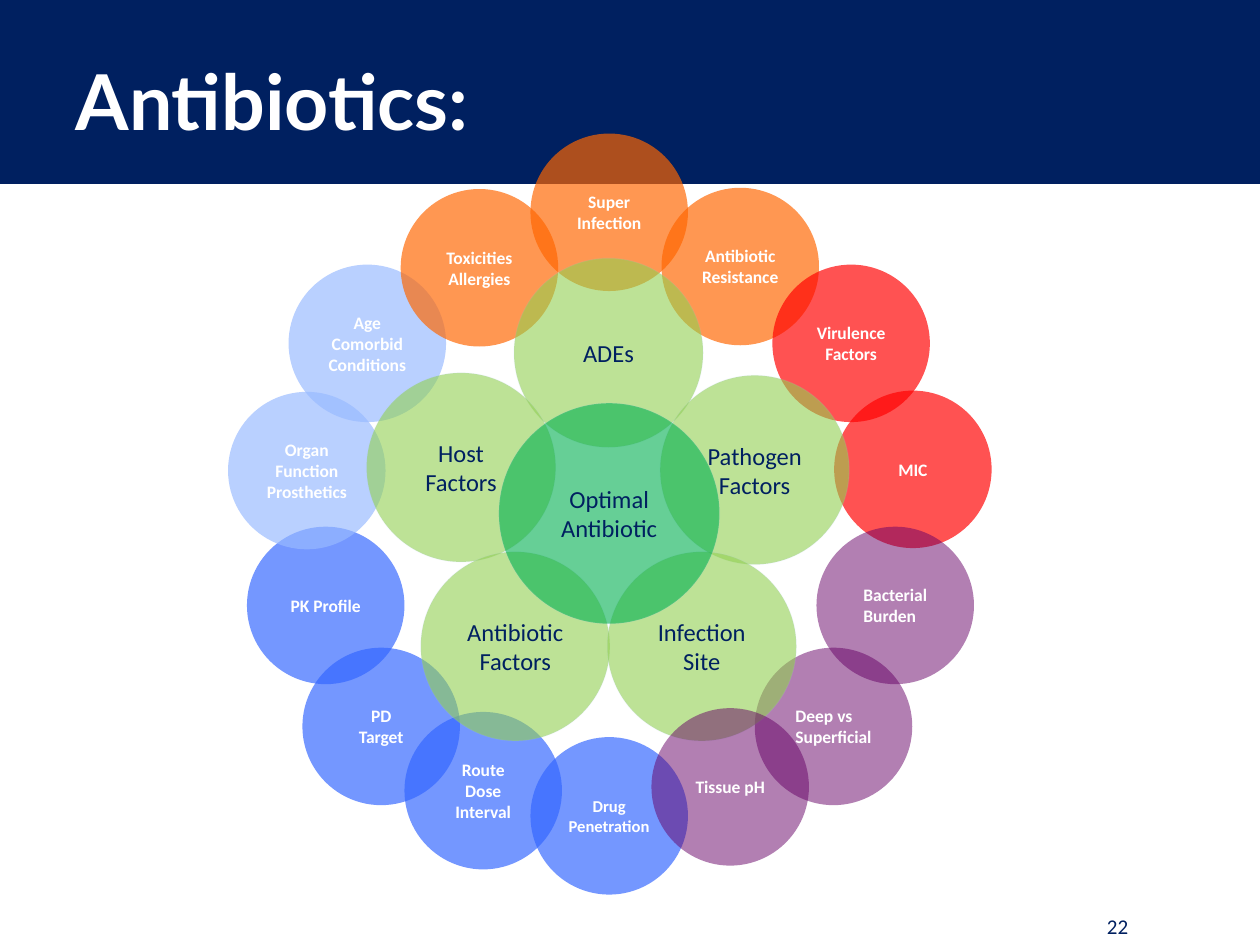
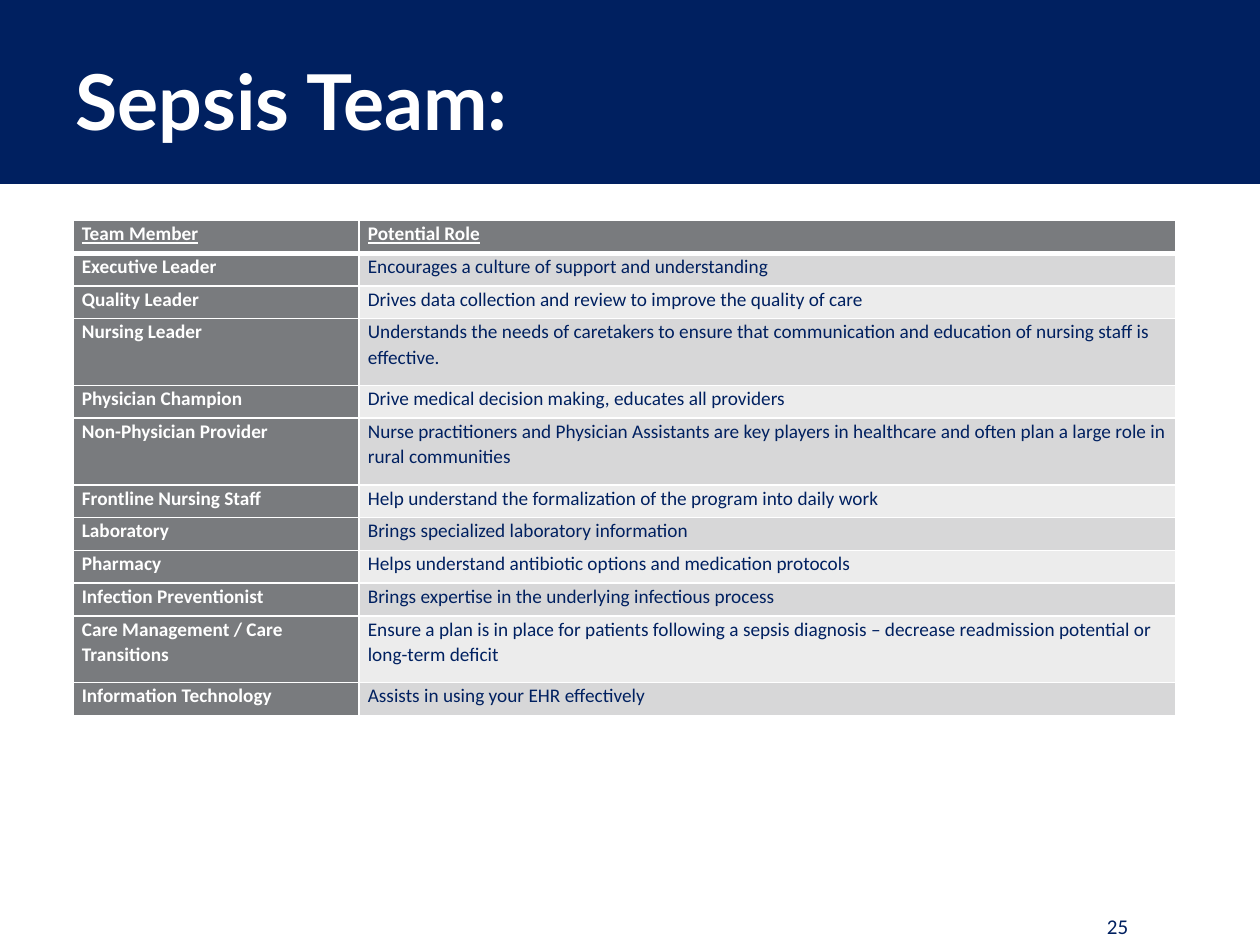
from pptx import Presentation
from pptx.dml.color import RGBColor
from pptx.enum.shapes import MSO_SHAPE
from pptx.enum.text import MSO_ANCHOR, MSO_AUTO_SIZE, PP_ALIGN
from pptx.oxml import parse_xml
from pptx.oxml.ns import nsdecls, qn
from pptx.util import Inches, Pt
from lxml.etree import SubElement

NAVY = RGBColor(0x00, 0x20, 0x60)
WHITE = RGBColor(0xFF, 0xFF, 0xFF)
RED = RGBColor(0xFF, 0x00, 0x00)
ORANGE = RGBColor(0xFF, 0x66, 0x00)
BLUE = RGBColor(0x33, 0x66, 0xFF)
PALE_BLUE = RGBColor(0x98, 0xBA, 0xFF)
OUTLINE_BLUE = RGBColor(0xAC, 0xC8, 0xFF)
PURPLE = RGBColor(0x66, 0x00, 0x66)
LIME = RGBColor(0x92, 0xD0, 0x50)
GREEN = RGBColor(0x00, 0xB0, 0x50)
GREY = RGBColor(0x79, 0x7B, 0x7E)
ROW_DARK = RGBColor(0xD7, 0xD7, 0xD8)
ROW_LIGHT = RGBColor(0xEC, 0xEC, 0xEC)

TITLE_FONT = "Lato"
BODY_FONT = "Calibri"
TITLE_ONLY = 5

DETAIL_SIZE = 1.25
FACTOR_SIZE = 1.5
HUB_SIZE = 1.75

DETAILS = [
    ("MIC", 4.81, 2.04, RED),
    ("Antibiotic Resistance", 3.44, 0.43, ORANGE),
    ("Drug Penetration", 2.4, 4.79, BLUE),
    ("PD\nTarget", 0.59, 4.08, BLUE),
    ("Route\nDose\nInterval", 1.4, 4.59, BLUE),
    ("Virulence Factors", 4.32, 1.04, RED),
    ("PK Profile", 0.15, 3.12, BLUE),
    ("Age\nComorbid Conditions", 0.48, 1.04, PALE_BLUE),
    ("Super Infection", 2.4, 0, ORANGE),
    ("Toxicities\nAllergies", 1.37, 0.44, ORANGE),
    ("Bacterial Burden", 4.67, 3.12, PURPLE),
    ("Deep vs Superficial", 4.18, 4.08, PURPLE),
    ("Organ Function\nProsthetics", 0, 2.05, PALE_BLUE),
]
FRONT_DETAIL = ("Tissue pH", 3.36, 4.56, PURPLE)

FACTORS = [
    ("ADEs", 2.27, 0.99),
    ("Pathogen Factors", 3.43, 1.92),
    ("Host Factors", 1.1, 1.9),
    ("Antibiotic Factors", 1.53, 3.32),
    ("Infection Site", 3.01, 3.32),
]

TEAM = [
    ("Team Member", "Potential Role"),
    ("Executive Leader", "Encourages a culture of support and understanding"),
    ("Quality Leader", "Drives data collection and review to improve the quality of care"),
    ("Nursing Leader", "Understands the needs of caretakers to ensure that communication "
     "and education of nursing staff is effective."),
    ("Physician Champion", "Drive medical decision making, educates all providers"),
    ("Non-Physician Provider", "Nurse practitioners and Physician Assistants are key players "
     "in healthcare and often plan a large role in rural communities"),
    ("Frontline Nursing Staff", "Help understand the formalization of the program into daily work"),
    ("Laboratory", "Brings specialized laboratory information"),
    ("Pharmacy", "Helps understand antibiotic options and medication protocols"),
    ("Infection Preventionist", "Brings expertise in the underlying infectious process"),
    ("Care Management / Care Transitions", "Ensure a plan is in place for patients following a "
     "sepsis diagnosis – decrease readmission potential or long-term deficit"),
    ("Information Technology", "Assists in using your EHR effectively"),
]
COLUMN_WIDTHS = (2.27, 6.48)
LINE_LIMIT = 100


def format_paragraphs(frame, size, color, bold=False, align=PP_ALIGN.LEFT, font=BODY_FONT):
    for para in frame.paragraphs:
        para.alignment = align
        para.font.name = font
        para.font.size = Pt(size)
        para.font.bold = bold
        para.font.color.rgb = color


def set_opacity(fill, percent):
    color = fill._xPr.find(qn("a:solidFill")).find(qn("a:srgbClr"))
    SubElement(color, qn("a:alpha"), val=str(percent * 1000))


def add_band(page, layout):
    band = page.shapes.add_shape(MSO_SHAPE.RECTANGLE, 0, 0, Inches(10), Inches(1.46))
    band.shadow.inherit = False
    band.fill.solid()
    band.fill.fore_color.rgb = NAVY
    band.line.fill.background()
    layout.shapes._spTree.insert(2, band._element)


def add_page(deck, heading, number):
    page = deck.slides.add_slide(deck.slide_layouts[TITLE_ONLY])
    title = page.shapes.title
    title.left, title.top, title.width, title.height = (
        Inches(0.5), Inches(0.17), Inches(9), Inches(1.25))
    frame = title.text_frame
    frame.text = heading
    frame.auto_size = MSO_AUTO_SIZE.NONE
    frame.vertical_anchor = MSO_ANCHOR.MIDDLE
    format_paragraphs(frame, 44, WHITE, True, font=TITLE_FONT)

    box = page.shapes.add_textbox(Inches(8.58), Inches(7.2), Inches(0.58), Inches(0.3))
    box.text_frame.word_wrap = True
    box.text_frame.vertical_anchor = MSO_ANCHOR.MIDDLE
    box.text_frame.text = str(number)
    format_paragraphs(box.text_frame, 12, NAVY, align=PP_ALIGN.CENTER)
    return page


def add_circle(page, text, left, top, size, color, opacity):
    circle = page.shapes.add_shape(
        MSO_SHAPE.OVAL, Inches(left), Inches(top), Inches(size), Inches(size))
    circle.shadow.inherit = False
    circle.fill.solid()
    circle.fill.fore_color.rgb = color
    set_opacity(circle.fill, opacity)
    circle.line.fill.background()
    frame = circle.text_frame
    frame.word_wrap = True
    frame.vertical_anchor = MSO_ANCHOR.MIDDLE
    frame.text = text
    return circle


def add_detail(page, left, top, detail):
    text, across, down, color = detail
    purple = color == PURPLE
    circle = add_circle(page, text, left + across, top + down, DETAIL_SIZE, color,
                        50 if purple else 68)
    frame = circle.text_frame
    frame._txBody.bodyPr.set("anchorCtr", "1")
    format_paragraphs(frame, 9.5 if text == "Drug Penetration" else 10, WHITE, True,
                      PP_ALIGN.LEFT if purple else PP_ALIGN.CENTER)


def add_factor(page, text, left, top, size, color):
    circle = add_circle(page, text, left, top, size, color, 60)
    circle.line.color.rgb = OUTLINE_BLUE
    circle.line.width = Pt(0.75)
    set_opacity(circle.line.fill, 10)
    format_paragraphs(circle.text_frame, 14, NAVY, align=PP_ALIGN.CENTER)


def add_factor_wheel(page, left, top):
    for detail in DETAILS:
        add_detail(page, left, top, detail)
    for text, across, down in FACTORS:
        add_factor(page, text, left + across, top + down, FACTOR_SIZE, LIME)
    add_factor(page, "Optimal Antibiotic", left + 2.15, top + 2.14, HUB_SIZE, GREEN)
    add_detail(page, left, top, FRONT_DETAIL)


def add_cell_borders(cell, row):
    widths = {"L": 1, "R": 1, "T": 3 if row == 1 else 1, "B": 3 if row == 0 else 1}
    properties = cell._tc.get_or_add_tcPr()
    for index, (side, width) in enumerate(widths.items()):
        properties.insert(index, parse_xml(
            f'<a:ln{side} {nsdecls("a")} w="{Pt(width)}"><a:solidFill>'
            f'<a:srgbClr val="{WHITE}"/></a:solidFill></a:ln{side}>'))


def fill_cell(cell, text, row, column):
    heading = row == 0 or column == 0
    cell.margin_left = cell.margin_right = Inches(0.07)
    cell.margin_top = cell.margin_bottom = 0
    cell.text = text
    format_paragraphs(cell.text_frame, 11, WHITE if heading else NAVY, heading)
    para = cell.text_frame.paragraphs[0]
    para.line_spacing = 1.07
    para.font.underline = row == 0
    cell.fill.solid()
    cell.fill.fore_color.rgb = GREY if heading else ROW_DARK if row % 2 else ROW_LIGHT
    add_cell_borders(cell, row)


def add_team_table(page, left, top):
    heights = [0.53 if len(role) > LINE_LIMIT else 0.26 for _, role in TEAM]
    table = page.shapes.add_table(
        len(TEAM), len(COLUMN_WIDTHS), Inches(left), Inches(top),
        Inches(sum(COLUMN_WIDTHS)), Inches(sum(heights))).table
    for column, width in zip(table.columns, COLUMN_WIDTHS):
        column.width = Inches(width)
    for row, (entry, height) in enumerate(zip(TEAM, heights)):
        table.rows[row].height = Inches(height)
        for column, text in enumerate(entry):
            fill_cell(table.cell(row, column), text, row, column)


def main():
    deck = Presentation()
    deck.slide_width, deck.slide_height = Inches(10), Inches(7.5)
    antibiotics = add_page(deck, "Antibiotics:", 22)
    add_band(antibiotics, deck.slide_layouts[TITLE_ONLY])
    add_factor_wheel(antibiotics, 1.81, 1.06)
    team = add_page(deck, "Sepsis Team:", 25)
    add_team_table(team, 0.58, 1.75)
    deck.save("out.pptx")


if __name__ == "__main__":
    main()
